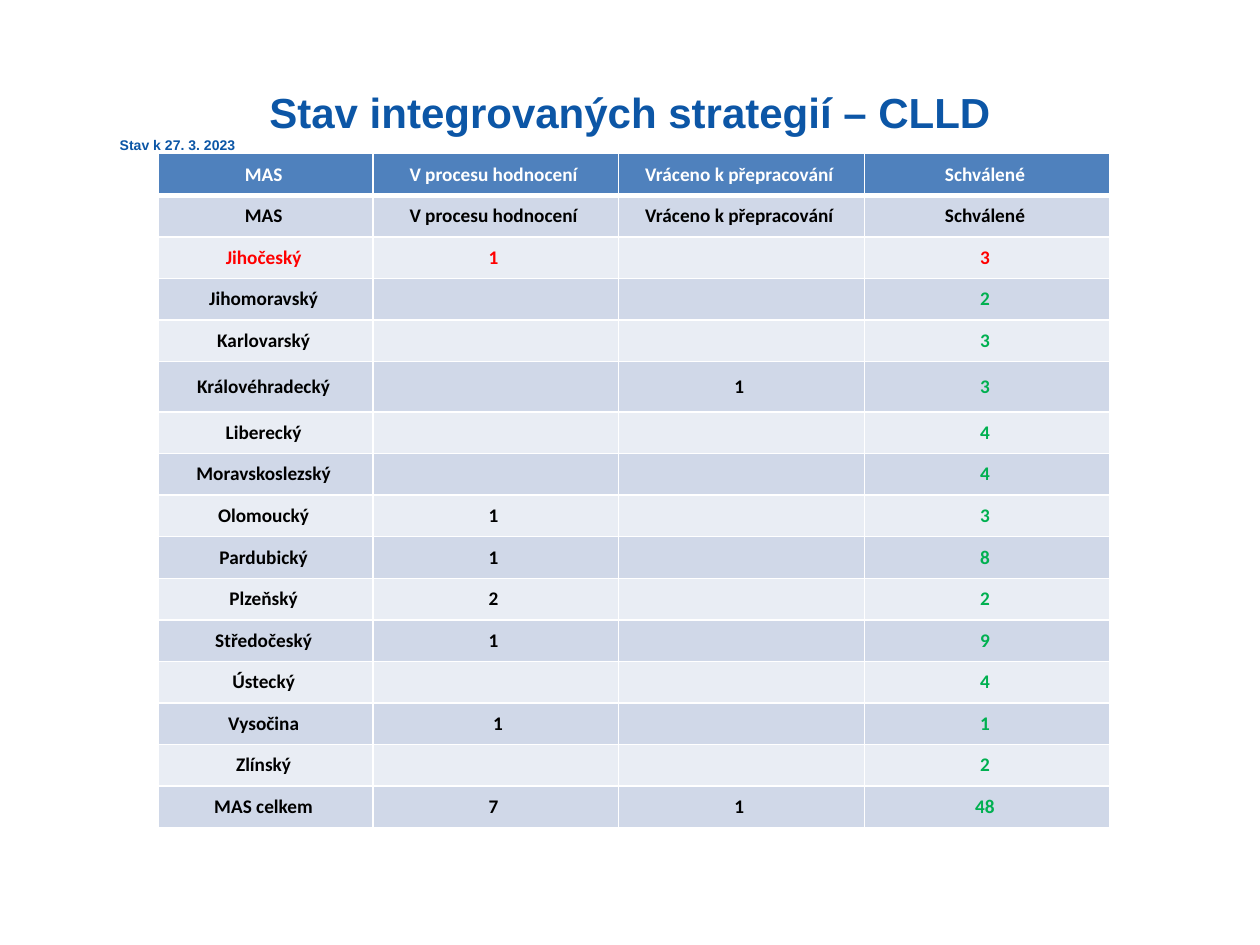
from pptx import Presentation
from pptx import util as u
from pptx.dml.color import RGBColor
from pptx.enum import text
from pptx.oxml import ns
from lxml import etree

THEME = {
    "blue": "0C56A6", "head": "4F81BD", "dark": "D0D8E8", "light": "E9EDF4",
    "white": "FFFFFF", "black": "000000", "red": "FF0000", "green": "00B050",
    "title": 24, "note": 8, "cell": 11,
    "sans": "Arial", "body": "Calibri",
}
TITLE = [
    ("Stav integrovaných strategií – CLLD", "title", text.PP_ALIGN.CENTER),
    ("Stav k 27. 3. 2023", "note", text.PP_ALIGN.LEFT),
]
HEAD = ("MAS", "V procesu hodnocení", "Vráceno k přepracování", "Schválené")
ROWS = [
    HEAD,
    HEAD,
    ("Jihočeský", "1", "", "3"),
    ("Jihomoravský", "", "", "2"),
    ("Karlovarský", "", "", "3"),
    ("Královéhradecký", "", "1", "3"),
    ("Liberecký", "", "", "4"),
    ("Moravskoslezský", "", "", "4"),
    ("Olomoucký", "1", "", "3"),
    ("Pardubický", "1", "", "8"),
    ("Plzeňský", "2", "", "2"),
    ("Středočeský", "1", "", "9"),
    ("Ústecký", "", "", "4"),
    ("Vysočina", " 1", "", "1"),
    ("Zlínský", "", "", "2"),
    ("MAS celkem ", "7", "1", "48"),
]
PAD = " "
COLS = (1.7, 1.95, 1.95, 1.95)
ROW, TALL = 0.33, 0.4
TALL_ROW = "Královéhradecký"
LEFT, TOP = 1.26, 1.22


def add_run(para, words, size, font, color):
    run = para.add_run()
    run.text = words
    run.font.size = u.Pt(THEME[size])
    run.font.name = THEME[font]
    run.font.bold = True
    run.font.color.rgb = RGBColor.from_string(THEME[color])


def add_edges(cell, row):
    props = cell._tc.get_or_add_tcPr()
    wide = {0: "B", 1: "T"}.get(row)
    for side in "LRTB":
        width = u.Pt(3 if side == wide else 1)
        line = etree.SubElement(props, ns.qn("a:ln" + side), w=str(width))
        fill = etree.SubElement(line, ns.qn("a:solidFill"))
        etree.SubElement(fill, ns.qn("a:srgbClr"), val=THEME["white"])


def pick_ink(row, col):
    if row == 0:
        return "white"
    if row == 2:
        return "red"
    return "green" if col == 3 and row > 1 else "black"


def add_title(slide):
    box = slide.shapes.title
    box.left, box.top = u.Inches(0.85), u.Inches(0.3)
    box.width, box.height = u.Inches(8.3), u.Inches(TOP - 0.3)
    frame = box.text_frame
    frame.word_wrap = True
    frame.auto_size = text.MSO_AUTO_SIZE.NONE
    frame.vertical_anchor = text.MSO_ANCHOR.BOTTOM
    frame.margin_bottom = 0
    for i, (words, size, align) in enumerate(TITLE):
        para = frame.add_paragraph() if i else frame.paragraphs[0]
        para.alignment = align
        para.space_before = u.Pt(0)
        add_run(para, words, size, "sans", "blue")


def add_grid(slide):
    highs = [TALL if row[0] == TALL_ROW else ROW for row in ROWS]
    area = [u.Inches(n) for n in (LEFT, TOP, sum(COLS), sum(highs))]
    table = slide.shapes.add_table(len(ROWS), len(COLS), *area).table
    for col, width in zip(table.columns, COLS):
        col.width = u.Inches(width)
    for r, (row, high) in enumerate(zip(ROWS, highs)):
        table.rows[r].height = u.Inches(high)
        shade = "head" if r == 0 else "dark" if r % 2 else "light"
        for c, words in enumerate(row):
            cell = table.cell(r, c)
            cell.margin_top = cell.margin_bottom = 0
            cell.vertical_anchor = text.MSO_ANCHOR.MIDDLE
            add_edges(cell, r)
            cell.fill.solid()
            cell.fill.fore_color.rgb = RGBColor.from_string(THEME[shade])
            if words:
                para = cell.text_frame.paragraphs[0]
                para.alignment = text.PP_ALIGN.CENTER
                padded = words + PAD if words == words.strip() else words
                add_run(para, padded, "cell", "body", pick_ink(r, c))


def main():
    deck = Presentation()
    deck.slide_width, deck.slide_height = u.Inches(10), u.Inches(7.5)
    slide = deck.slides.add_slide(deck.slide_layouts[5])
    add_title(slide)
    add_grid(slide)
    deck.save("out.pptx")


if __name__ == "__main__":
    main()
